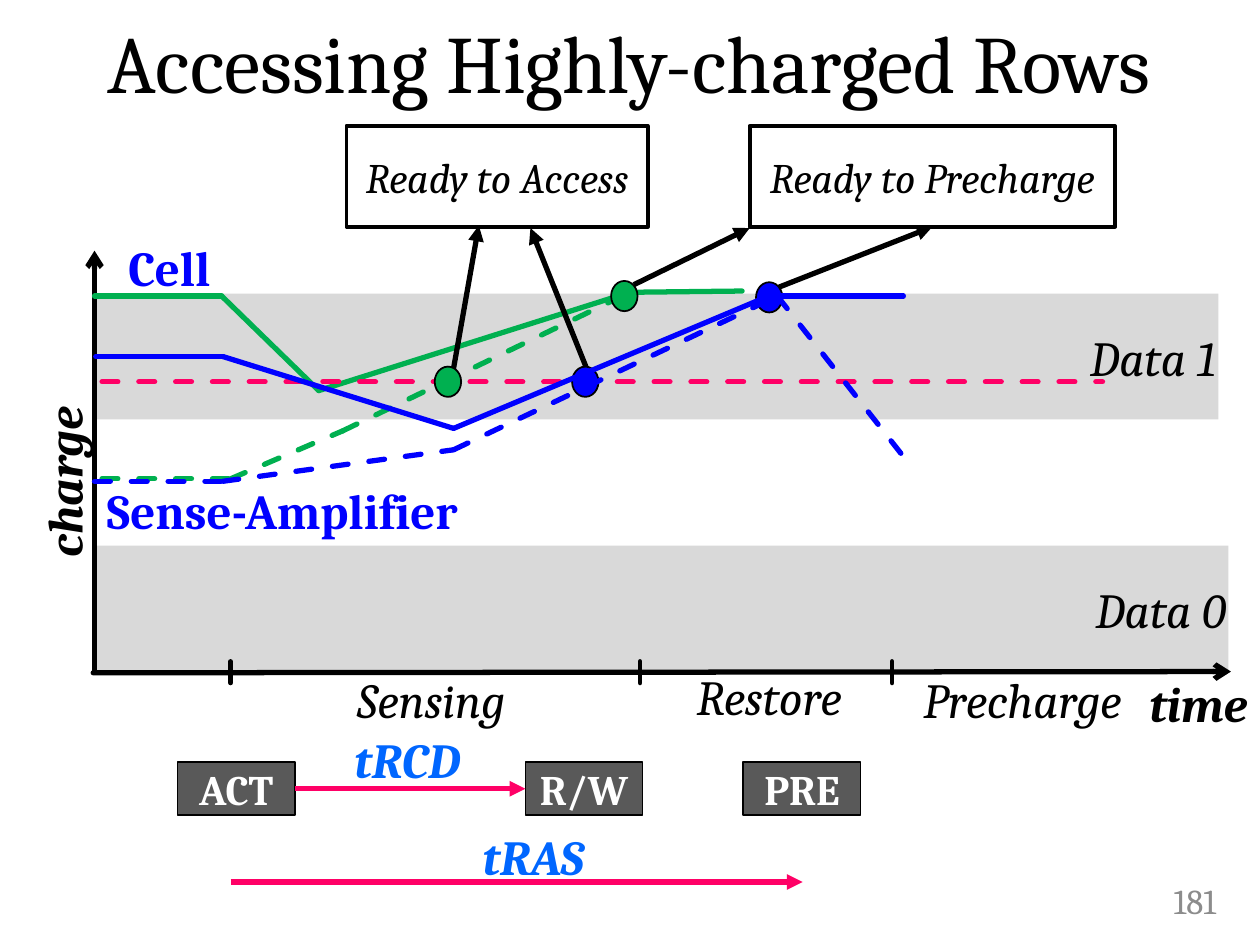
from lxml import etree
from pptx import Presentation
from pptx.dml.color import RGBColor
from pptx.enum.dml import MSO_LINE_DASH_STYLE as Dash
from pptx.enum.shapes import MSO_CONNECTOR as Connector, MSO_SHAPE as Shape
from pptx.enum.text import MSO_ANCHOR as Anchor, MSO_AUTO_SIZE as AutoSize, PP_ALIGN as Align
from pptx.oxml.ns import qn
from pptx.util import Inches, Pt

BLACK, WHITE, GRAY = "000000", "FFFFFF", "D9D9D9"
GREEN, BLUE, PINK, SKY = "00B050", "0000FF", "FF0066", "0066FF"
FONT = "Cambria"
MIDDLE_LEVEL = 3.03
TOP, LEFT, BOTTOM, RIGHT = range(4)

PHASE_TICKS = [1.83, 5.08, 7.08]
COMMANDS = {"ACT": 1.41, "R/W": 4.17, "PRE": 5.9}
CURVES = [
    (GREEN, None, [(0.75, 2.35), (1.76, 2.35), (2.53, 3.1), (5, 2.32), (5.89, 2.31)]),
    (GREEN, Dash.DASH, [(0.81, 3.8), (1.83, 3.8), (2.72, 3.42), (5, 2.32)]),
    (BLUE, None, [(0.76, 2.83), (1.77, 2.83), (3.6, 3.4), (6.1, 2.35), (7.17, 2.35)]),
    (BLUE, Dash.DASH, [(0.75, 3.82), (1.77, 3.82), (3.6, 3.57), (6.17, 2.35), (7.23, 3.7)]),
]
ITALIC = {"size": 28, "italic": True}
BOLD = {"size": 28, "bold": True}
BOLD_ITALIC = {**BOLD, "italic": True}


def rgb(color):
    return RGBColor.from_string(color)


def write(shape, text, size, color=BLACK, align=Align.CENTER, anchor=Anchor.MIDDLE, **font_values):
    frame = shape.text_frame
    for name, value in {"word_wrap": True, "auto_size": AutoSize.NONE,
                        "vertical_anchor": anchor}.items():
        setattr(frame, name, value)
    paragraph = frame.paragraphs[0]
    paragraph.text = text
    paragraph.alignment = align
    for name, value in {"name": FONT, "size": Pt(size), **font_values}.items():
        setattr(paragraph.font, name, value)
    paragraph.font.color.rgb = rgb(color)


def add_label(slide, text, left, top, width, height, **format_values):
    box = slide.shapes.add_textbox(*map(Inches, (left, top, width, height)))
    write(box, text, **format_values)
    return box


def add_box(slide, kind, left, top, width, height, fill=None, line=None, weight=1):
    shape = slide.shapes.add_shape(kind, *map(Inches, (left, top, width, height)))
    shape.shadow.inherit = False
    if fill:
        shape.fill.solid()
        shape.fill.fore_color.rgb = rgb(fill)
    else:
        shape.fill.background()
    if line:
        shape.line.color.rgb = rgb(line)
        shape.line.width = Pt(weight)
    else:
        shape.line.fill.background()
    return shape


def add_line(slide, start, end, color=BLACK, weight=3, dash=None, head=None):
    """Draw a straight line; head names the arrowhead type at its end."""
    line = slide.shapes.add_connector(Connector.STRAIGHT, *map(Inches, (*start, *end)))
    line.line.color.rgb = rgb(color)
    line.line.width = Pt(weight)
    if dash:
        line.line.dash_style = dash
    outline = line.line._get_or_add_ln()
    if head != "triangle":
        outline.set("cap", "rnd")
    if head:
        etree.SubElement(outline, qn("a:tailEnd"), type=head)
    etree.SubElement(line._element.spPr, qn("a:effectLst"))
    return line


def add_curves(slide, wanted_color):
    for color, dash, points in CURVES:
        if color == wanted_color:
            for start, end in zip(points, points[1:]):
                add_line(slide, start, end, color, dash=dash)


def add_marker(slide, left, top, color):
    add_box(slide, Shape.OVAL, left, top, 0.21, 0.24, color, BLACK)


def add_data_band(slide, text, top, width, label_left):
    add_box(slide, Shape.RECTANGLE, 0.75, top, width, 1, GRAY)
    add_label(slide, text, label_left, top, 1.97, 1, align=Align.RIGHT, **ITALIC)


def add_callout(slide, text, left, width):
    box = add_box(slide, Shape.RECTANGLE, left, 1, width, 0.8, line=BLACK, weight=2.25)
    write(box, text, 24, italic=True)
    return box


def add_axes(slide):
    add_line(slide, (0.74, 5.34), (9.77, 5.33), head="arrow")
    add_line(slide, (0.75, 5.33), (0.75, 1.99), head="arrow")
    for x in PHASE_TICKS:
        add_line(slide, (x, 5.25), (x, 5.42), weight=2.75)
    add_label(slide, "time", 8.58, 5.33, 1.42, 0.5, align=Align.RIGHT, **BOLD_ITALIC)
    charge = add_label(slide, "charge", -1, 3.58, 3, 0.49, **BOLD_ITALIC)
    charge.rotation = 270
    for text, left, top, width in [("Sensing", 2.67, 5.34, 1.44), ("Restore", 5.34, 5.32, 1.44),
                                   ("Precharge", 7.05, 5.34, 1.95)]:
        add_label(slide, text, left, top, width, 0.41, align=Align.RIGHT, **ITALIC)


def add_commands(slide):
    boxes = {}
    for text, left in COMMANDS.items():
        box = add_box(slide, Shape.RECTANGLE, left, 6.05, 0.93, 0.42, "595959", BLACK)
        write(box, text, 24, WHITE, bold=True)
        box.text_frame.word_wrap = False
        boxes[text] = box
    delay = add_line(slide, (2.34, 6.26), (4.17, 6.26), PINK, head="triangle")
    delay.begin_connect(boxes["ACT"], RIGHT)
    delay.end_connect(boxes["R/W"], LEFT)
    add_line(slide, (1.83, 7), (6.37, 7), PINK, head="triangle")
    for text, left, top in [("tRCD", 2.64, 5.82), ("tRAS", 3.64, 6.59)]:
        add_label(slide, text, left, top, 1.19, 0.41, color=SKY, **BOLD_ITALIC)


def add_ready_points(slide):
    add_callout(slide, "Ready to Access", 2.75, 2.39)
    precharge = add_callout(slide, "Ready to Precharge", 5.95, 2.9)
    marker_top = MIDDLE_LEVEL - 0.12
    add_marker(slide, 4.54, marker_top, BLUE)
    add_marker(slide, 6, 2.24, BLUE)
    add_line(slide, (4.65, 2.91), (4.21, 1.81), head="triangle")
    arrow = add_line(slide, (6.18, 2.28), (7.4, 1.8), head="triangle")
    arrow.end_connect(precharge, BOTTOM)
    add_line(slide, (3.56, 3.15), (3.8, 1.79), head="triangle")
    add_marker(slide, 4.85, 2.23, GREEN)
    add_marker(slide, 3.45, marker_top, GREEN)
    add_line(slide, (5.03, 2.26), (5.95, 1.81), head="triangle")


def add_title(slide, text):
    title = slide.shapes.title
    for name, value in {"left": 0.41, "top": 0.07, "width": 9.17, "height": 0.83}.items():
        setattr(title, name, Inches(value))
    write(title, text, 46.5, anchor=Anchor.BOTTOM)
    title.text_frame.paragraphs[0].line_spacing = 0.7


def main():
    presentation = Presentation()
    presentation.slide_width = Inches(10)
    presentation.slide_height = Inches(7.5)
    slide = presentation.slides.add_slide(presentation.slide_layouts[5])

    add_title(slide, "Accessing Highly-charged Rows")
    add_label(slide, "181", 9, 6.95, 0.75, 0.4, size=20, color="8C8C8C", align=Align.RIGHT)
    add_data_band(slide, "Data 0", 4.33, 9, 7.86)
    add_data_band(slide, "Data 1", 2.33, 8.92, 7.78)
    add_label(slide, "Cell", 0.92, 1.88, 0.9, 0.47, color=BLUE, align=Align.LEFT, **BOLD)
    add_label(slide, "Sense-Amplifier", 0.75, 3.81, 3.12, 0.47, color=BLUE,
              align=Align.LEFT, **BOLD)
    add_axes(slide)
    add_curves(slide, GREEN)
    add_line(slide, (0.81, MIDDLE_LEVEL), (8.75, MIDDLE_LEVEL), PINK, dash=Dash.DASH)
    add_commands(slide)
    add_ready_points(slide)
    add_curves(slide, BLUE)
    presentation.save("out.pptx")


if __name__ == "__main__":
    main()
